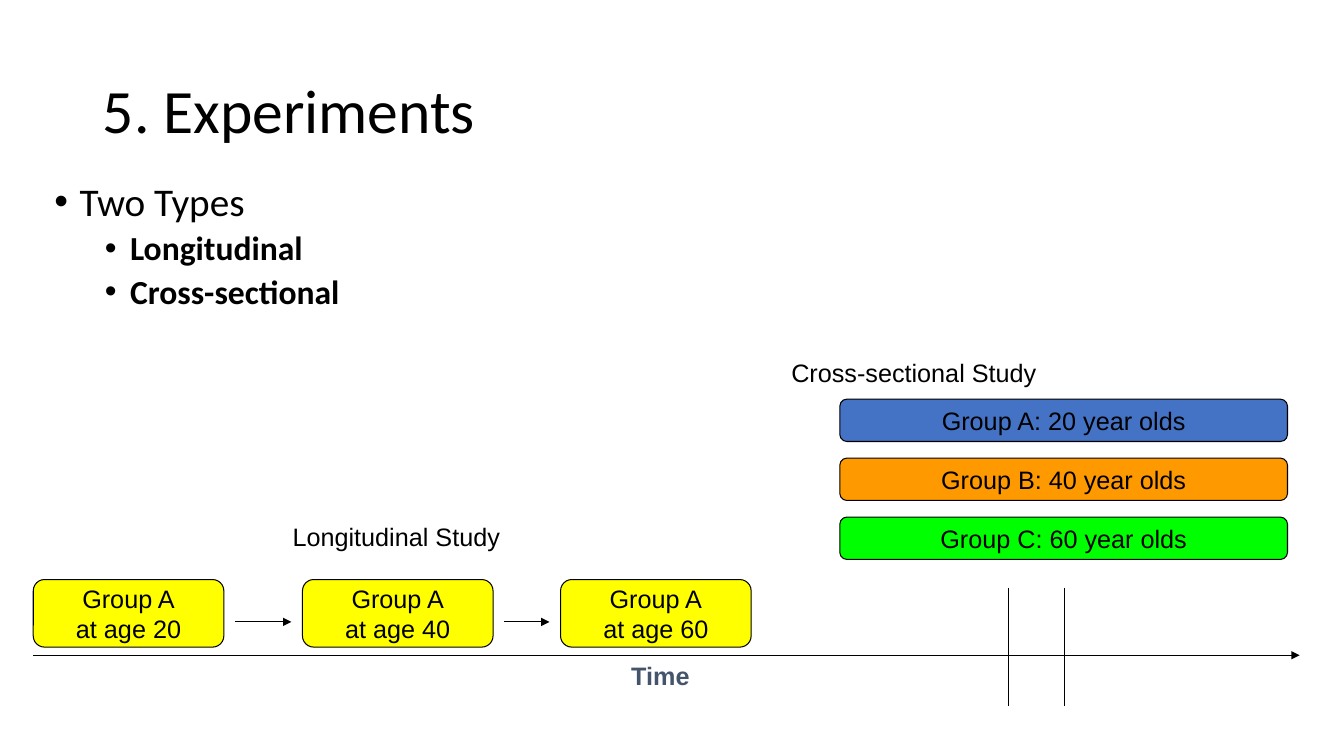
from pptx import Presentation
from pptx.dml.color import RGBColor
from pptx.enum.shapes import MSO_CONNECTOR, MSO_SHAPE
from pptx.enum.text import MSO_ANCHOR, MSO_AUTO_SIZE, PP_ALIGN
from pptx.oxml.ns import qn
from pptx.util import Inches, Pt
from lxml.etree import SubElement

BLACK = "000000"


def color(hex_value):
    """Turn a hex string into a colour."""
    return RGBColor.from_string(hex_value)


def write(paragraph, text, size=18, font="Arial", fill=BLACK, bold=False,
          align=PP_ALIGN.LEFT, spacing=None, before=0):
    """Write formatted text into a paragraph."""
    paragraph.alignment = align
    paragraph.line_spacing = spacing
    paragraph.space_before = Pt(before)
    run = paragraph.add_run()
    run.text = text
    run.font.size = Pt(size)
    run.font.name = font
    run.font.bold = bold
    run.font.color.rgb = color(fill)


def place(shape, left, top, width, height):
    """Move and size a placeholder."""
    shape.left, shape.top = Inches(left), Inches(top)
    shape.width, shape.height = Inches(width), Inches(height)


def add_bullet(paragraph, indent):
    """Give a paragraph a round bullet with a hanging indent."""
    properties = paragraph._p.get_or_add_pPr()
    properties.set("marL", str(Inches(indent)))
    properties.set("indent", str(Inches(-0.25)))
    SubElement(properties, qn("a:buFont"), typeface="Arial")
    SubElement(properties, qn("a:buChar"), char="•")


def add_title(slide, text):
    """Fill the title placeholder."""
    title = slide.shapes.title
    place(title, 0.92, 0.4, 11.5, 1.45)
    frame = title.text_frame
    frame.auto_size = MSO_AUTO_SIZE.NONE
    frame.vertical_anchor = MSO_ANCHOR.MIDDLE
    write(frame.paragraphs[0], text, size=44, font="Calibri", spacing=0.9)


def add_list(slide, heading, items):
    """Fill the body placeholder with a heading and bold sub-items."""
    body = slide.placeholders[1]
    place(body, 0.44, 1.76, 11.17, 1.92)
    frame = body.text_frame
    frame.auto_size = MSO_AUTO_SIZE.NONE
    paragraph = frame.paragraphs[0]
    write(paragraph, heading, size=28, font="Calibri", spacing=0.9, before=10)
    add_bullet(paragraph, 0.25)
    for item in items:
        paragraph = frame.add_paragraph()
        paragraph.level = 1
        write(paragraph, item, size=24, font="Calibri", bold=True,
              spacing=0.9, before=5)
        add_bullet(paragraph, 0.75)


def add_label(slide, text, left, top, width, **text_format):
    """Add a one-line text box."""
    box = slide.shapes.add_textbox(Inches(left), Inches(top), Inches(width), Inches(0.4))
    box.text_frame.word_wrap = True
    write(box.text_frame.paragraphs[0], text, **text_format)


def add_group_box(slide, lines, left, top, width, height, fill):
    """Add a rounded box with centred lines of text."""
    box = slide.shapes.add_shape(MSO_SHAPE.ROUNDED_RECTANGLE, Inches(left),
                                 Inches(top), Inches(width), Inches(height))
    box.shadow.inherit = False
    box.fill.solid()
    box.fill.fore_color.rgb = color(fill)
    box.line.color.rgb = color(BLACK)
    box.line.width = Pt(0.75)
    frame = box.text_frame
    frame.word_wrap = False
    frame.vertical_anchor = MSO_ANCHOR.MIDDLE
    for index, line in enumerate(lines):
        paragraph = frame.add_paragraph() if index else frame.paragraphs[0]
        write(paragraph, line, align=PP_ALIGN.CENTER)


def add_line(slide, x1, y1, x2, y2, arrow=False):
    """Add a thin black line, with an arrowhead at its end if asked."""
    line = slide.shapes.add_connector(MSO_CONNECTOR.STRAIGHT, Inches(x1),
                                      Inches(y1), Inches(x2), Inches(y2))
    line.line.color.rgb = color(BLACK)
    line.line.width = Pt(0.75)
    if arrow:
        SubElement(line.line._get_or_add_ln(), qn("a:tailEnd"), type="triangle")
    SubElement(line._element.spPr, qn("a:effectLst"))


def add_cross_sectional_study(slide):
    """Draw three age groups studied at one time."""
    add_label(slide, "Cross-sectional Study", 7.75, 3.5, 2.66)
    groups = [("A", 20, "4472C4"), ("B", 40, "FF9900"), ("C", 60, "00FF00")]
    for row, (name, age, fill) in enumerate(groups):
        add_group_box(slide, [f"Group {name}: {age} year olds"],
                      8.33, 3.96 + row * 0.585, 4.44, 0.42, fill)
    for x in (10, 10.56):
        add_line(slide, x, 5.83, x, 7)


def add_longitudinal_study(slide):
    """Draw one group followed through three ages."""
    add_label(slide, "Longitudinal Study", 0.42, 5.12, 7.02, align=PP_ALIGN.CENTER)
    width, gap = 1.89, 0.11
    lefts = [0.33, 3, 5.56]
    for left, age in zip(lefts, (20, 40, 60)):
        add_group_box(slide, ["Group A", f"at age {age}"],
                      left, 5.75, width, 0.67, "FFFF00")
    for left, following in zip(lefts, lefts[1:]):
        add_line(slide, left + width + gap, 6.17, following - gap, 6.17, arrow=True)


def add_time_axis(slide):
    """Draw the time arrow and its label."""
    add_line(slide, 0.33, 6.5, 12.89, 6.5, arrow=True)
    add_label(slide, "Time", 0.33, 6.5, 12.44, fill="44546A", bold=True,
              align=PP_ALIGN.CENTER)


def main():
    """Build and save the slide."""
    presentation = Presentation()
    presentation.slide_width = Inches(13.33)
    presentation.slide_height = Inches(7.5)
    slide = presentation.slides.add_slide(presentation.slide_layouts[1])
    add_title(slide, "5. Experiments")
    add_list(slide, "Two Types", ["Longitudinal", "Cross-sectional"])
    add_cross_sectional_study(slide)
    add_time_axis(slide)
    add_longitudinal_study(slide)
    presentation.save("out.pptx")


if __name__ == "__main__":
    main()
